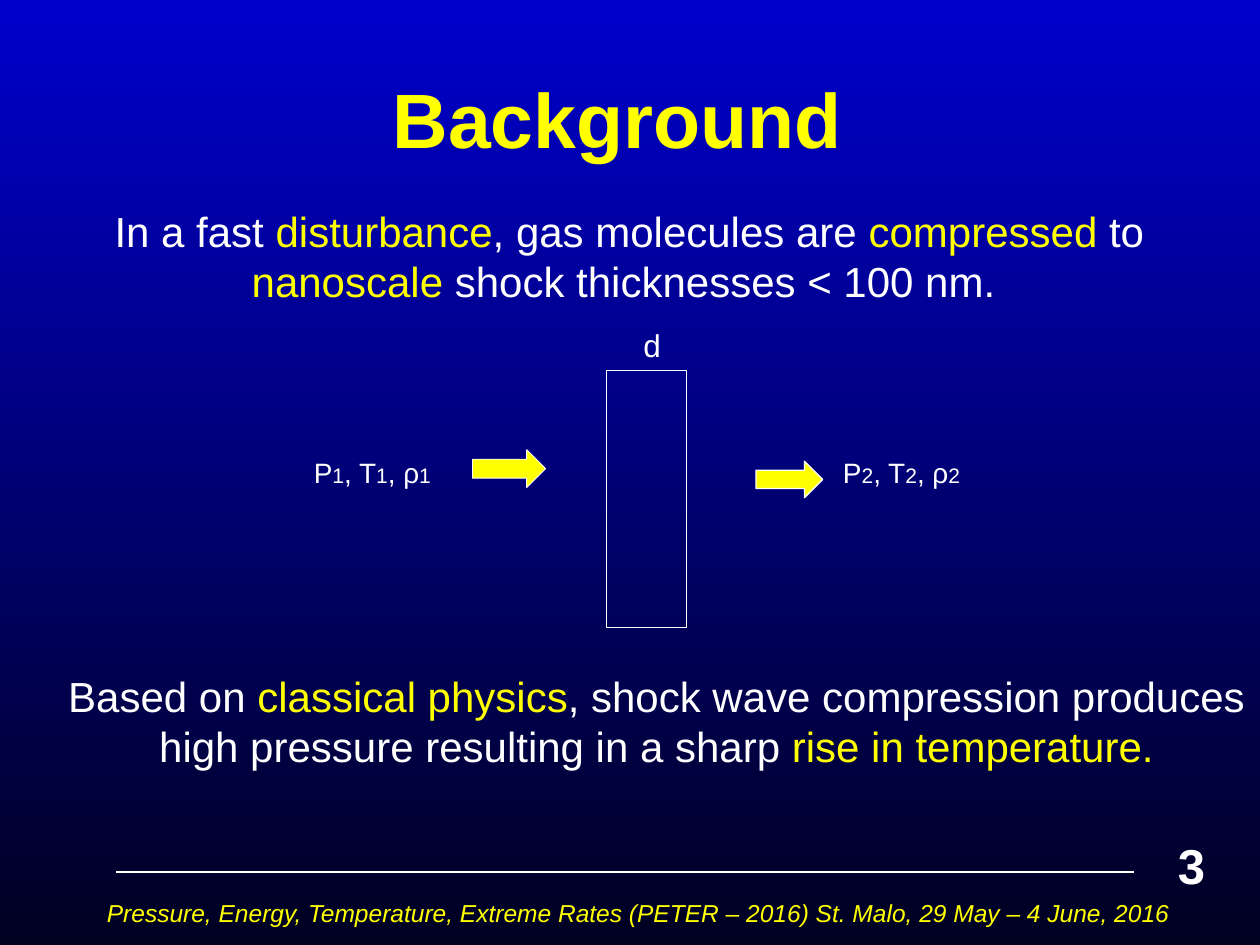
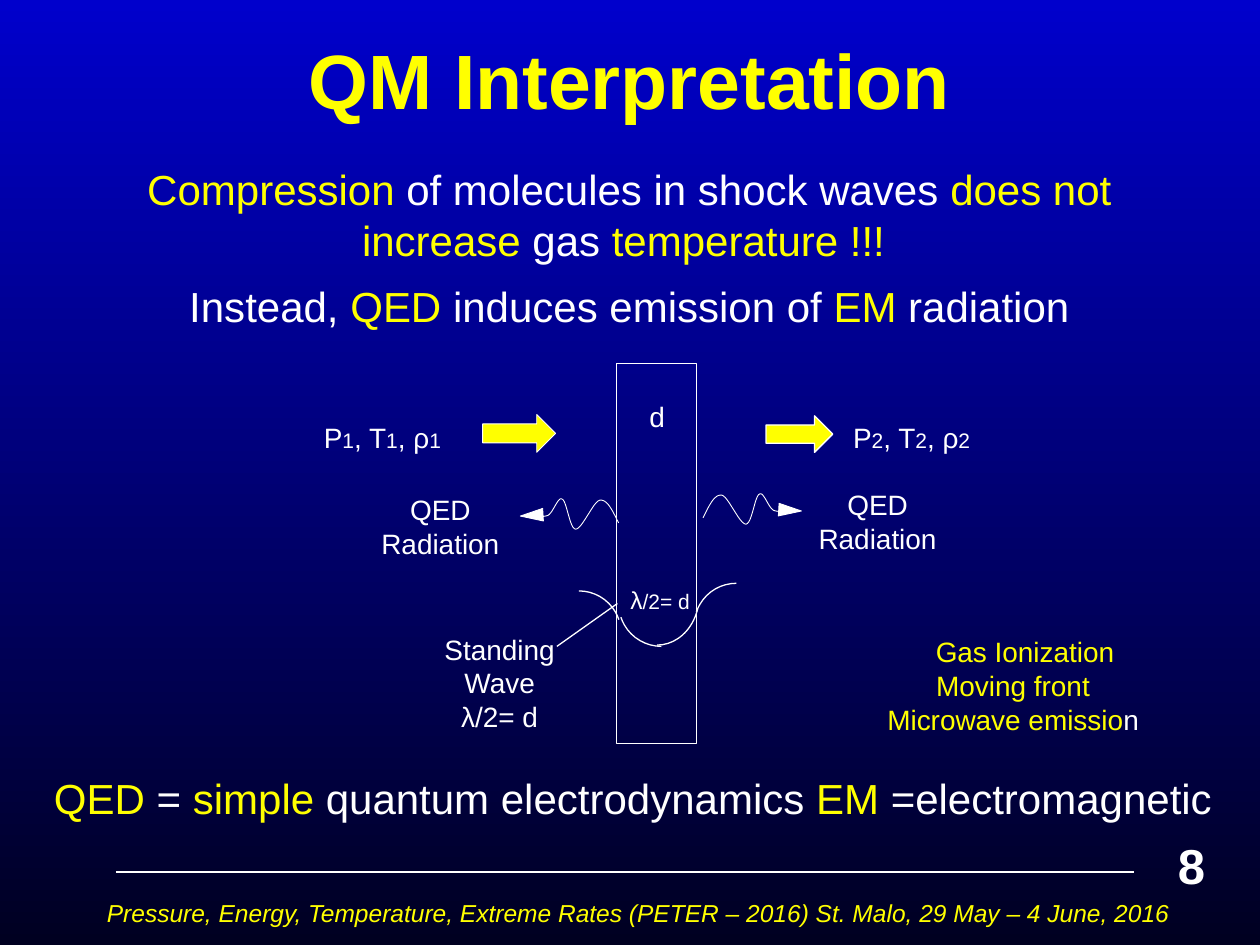
"""Build two slides on shock waves and their QED interpretation."""
from dataclasses import dataclass

from pptx import Presentation
from pptx.dml.color import RGBColor
from pptx.enum.shapes import MSO_CONNECTOR, MSO_SHAPE
from pptx.enum.text import MSO_ANCHOR, PP_ALIGN
from pptx.oxml.ns import qn
from pptx.util import Inches, Pt
from lxml.etree import SubElement


@dataclass(frozen=True)
class Theme:
    """Colours, font and type sizes shared by the slides."""
    font: str = "Arial"
    white: str = "FFFFFF"
    yellow: str = "FFFF00"
    sky: str = "0000CC"
    night: str = "000021"
    title: int = 44
    number: int = 28
    body: int = 24
    thickness: int = 18
    label: int = 16
    footer: int = 14
    small: int = 12


THEME = Theme()
FOOTER = ("Pressure, Energy, Temperature, Extreme Rates (PETER – 2016) "
          "St. Malo, 29 May – 4 June, 2016")
WAVE_CURVES = [
    [(0.05, -0.10), (0.09, -0.19), (0.15, -0.18)],
    [(0.20, -0.17), (0.29, 0.05), (0.34, 0.05)],
    [(0.39, 0.05), (0.41, -0.18), (0.45, -0.19)],
    [(0.48, -0.21), (0.52, -0.08), (0.56, -0.06)],
    [(0.61, -0.04), (0.65, -0.06), (0.70, -0.08)],
]


def rgb(color):
    """Return a colour object for a hexadecimal string."""
    return RGBColor.from_string(color)


def add_text(slide, text, left, top, width, height, *, size=THEME.label,
             color=THEME.white, accent_color=None, accent_size=None,
             bold=False, italic=False, align=PP_ALIGN.CENTER,
             anchor=MSO_ANCHOR.TOP, space_before=0):
    """Add a text box; bars in the text switch the accent on and off."""
    box = slide.shapes.add_textbox(Inches(left), Inches(top), Inches(width), Inches(height))
    frame = box.text_frame
    frame.word_wrap = True
    frame.vertical_anchor = anchor
    for index, line in enumerate(text.split("\n")):
        paragraph = frame.add_paragraph() if index else frame.paragraphs[0]
        paragraph.alignment = align
        paragraph.space_before = Pt(space_before if index else 0)
        for part, words in enumerate(line.split("|")):
            if not words:
                continue
            accented = part % 2 == 1
            run = paragraph.add_run()
            run.text = words
            font = run.font
            font.name, font.bold, font.italic = THEME.font, bold, italic
            font.size = Pt(accent_size if accented and accent_size else size)
            font.color.rgb = rgb(accent_color if accented and accent_color else color)
    return box


def add_body(slide, text, left, top, width, height, **options):
    """Add body text with yellow accents."""
    add_text(slide, text, left, top, width, height, size=THEME.body,
             accent_color=THEME.yellow, **options)


def style_shape(shape, fill=None, line_width=0.75):
    """Give a shape a white outline, an optional fill and no shadow."""
    shape.shadow.inherit = False
    if fill:
        shape.fill.solid()
        shape.fill.fore_color.rgb = rgb(fill)
    else:
        shape.fill.background()
    shape.line.color.rgb = rgb(THEME.white)
    shape.line.width = Pt(line_width)


def add_shape(slide, kind, left, top, width, height, **style):
    """Add a styled preset shape."""
    shape = slide.shapes.add_shape(kind, Inches(left), Inches(top), Inches(width), Inches(height))
    style_shape(shape, **style)
    return shape


def add_line(slide, start, end):
    """Add a thin white straight line."""
    line = slide.shapes.add_connector(
        MSO_CONNECTOR.STRAIGHT, *(Inches(value) for value in (*start, *end)))
    line.line.color.rgb = rgb(THEME.white)
    line.line.width = Pt(0.75)
    SubElement(line.element.spPr, qn("a:effectLst"))


def add_arc(slide, left, top, width, height, start, end):
    """Add an arc between two clockwise angles in degrees."""
    arc = add_shape(slide, MSO_SHAPE.ARC, left, top, width, height)
    arc.adjustments[0] = start * 0.6
    arc.adjustments[1] = end * 0.6


def wave_points(steps=12):
    """Sample the Bezier curves of a radiation wave."""
    start = (0, 0)
    points = []
    for first, second, end in WAVE_CURVES:
        for step in range(1, steps + 1):
            t = step / steps
            weights = ((1 - t) ** 3, 3 * t * (1 - t) ** 2, 3 * t * t * (1 - t), t ** 3)
            points.append(tuple(
                sum(weight * value for weight, value in zip(weights, values))
                for values in zip(start, first, second, end)))
        start = end
    return points


def add_radiation(slide, x, y, direction):
    """Add a wave with an arrowhead, going right (1) or left (-1)."""
    builder = slide.shapes.build_freeform(Inches(x), Inches(y))
    builder.add_line_segments(
        [(Inches(x + direction * across), Inches(y + down))
         for across, down in wave_points()], close=False)
    style_shape(builder.convert_to_shape(), line_width=0.5)
    head = add_shape(slide, MSO_SHAPE.ISOSCELES_TRIANGLE, x + direction * 0.69 - 0.05,
                     y - 0.15, 0.1, 0.18, fill=THEME.white, line_width=0.5)
    head.rotation = direction * 93.4


def add_flow(slide, left, top, exit_drop, front_top, front_height):
    """Add the gas states, flow arrows and shock front."""
    for state, offset in ((1, 0), (2, 4.2)):
        add_text(slide, f"P|{state}|, T|{state}|, ρ|{state}", left + offset, top,
                 1.25, 0.37, accent_size=THEME.small)
    add_shape(slide, MSO_SHAPE.RIGHT_ARROW, left + 1.42, top, 0.58, 0.3,
              fill=THEME.yellow, line_width=0.5)
    add_shape(slide, MSO_SHAPE.RIGHT_ARROW, left + 3.67, top + exit_drop, 0.53, 0.29,
              fill=THEME.yellow)
    add_shape(slide, MSO_SHAPE.RECTANGLE, left + 2.48, front_top, 0.64, front_height,
              line_width=0.25)


def set_background(presentation):
    """Give every slide the blue vertical gradient."""
    fill = presentation.slide_master.background.fill
    fill.gradient()
    fill.gradient_angle = 270
    for stop, color in zip(fill.gradient_stops, (THEME.sky, THEME.night)):
        stop.color.rgb = rgb(color)


def add_slide(presentation, title, number, title_left, title_top):
    """Add a slide with its title, rule, footer and number."""
    slide = presentation.slides.add_slide(presentation.slide_layouts[6])
    add_line(slide, (0.92, 6.92), (9, 6.92))
    add_text(slide, title, title_left, title_top, 8.5, 1.25, size=THEME.title,
             color=THEME.yellow, bold=True, anchor=MSO_ANCHOR.MIDDLE)
    add_text(slide, FOOTER, 0.75, 7.08, 8.75, 0.42, size=THEME.footer,
             color=THEME.yellow, italic=True, align=PP_ALIGN.LEFT)
    add_text(slide, str(number), 9.25, 6.58, 0.75, 0.57, size=THEME.number,
             bold=True, align=PP_ALIGN.LEFT)
    return slide


def build_background(presentation):
    """Build the slide on classical shock compression."""
    slide = add_slide(presentation, "Background", 3, 0.65, 0.31)
    add_body(slide, "In a fast |disturbance|, gas molecules are |compressed |to "
             "|nanoscale| shock thicknesses < 100 nm. ", 0.58, 1.58, 8.83, 0.91)
    add_flow(slide, 2.33, 3.57, 0.09, 2.94, 2.04)
    add_text(slide, "d", 4.55, 2.54, 1.25, 0.4, size=THEME.thickness)
    add_body(slide, "Based on |classical physics|, shock wave compression produces "
             "high pressure resulting in a sharp |rise in temperature.",
             0.42, 5.27, 9.58, 0.91)


def build_interpretation(presentation):
    """Build the slide on the QED interpretation."""
    slide = add_slide(presentation, "QM Interpretation", 8, 0.75, 0)
    add_body(slide, "|Compression| of molecules in shock waves |does not increase| gas "
             "|temperature !!! \nInstead, |QED| induces emission of |EM| radiation",
             0.58, 1.25, 8.83, 1.72, space_before=9)
    add_flow(slide, 2.41, 3.29, 0.01, 2.88, 3.02)
    add_text(slide, "d", 4.59, 3.12, 1.25, 0.37)

    add_radiation(slide, 5.58, 4.11, 1)
    add_radiation(slide, 4.91, 4.15, -1)
    for left, top in ((6.34, 3.82), (2.87, 3.86)):
        add_text(slide, "QED\nRadiation", left, top, 1.25, 0.64)

    add_arc(slide, 4.26, 4.69, 0.67, 0.67, 270, 341.4)
    add_arc(slide, 5.51, 4.63, 0.67, 0.67, 198.6, 270)
    add_arc(slide, 4.91, 4.45, 0.68, 0.68, 90, 161.4)
    add_arc(slide, 4.88, 4.33, 0.67, 0.79, 18.6, 90)
    add_line(slide, (4.42, 5.13), (4.9, 4.79))
    add_text(slide, "Standing\nWave\nλ/2= d", 3.34, 4.97, 1.25, 0.91)
    add_text(slide, "λ|/2= d", 4.61, 4.59, 1.26, 0.34, size=THEME.footer,
             accent_size=THEME.small)

    outcomes = add_text(slide, "Gas Ionization\nMoving front\nMicrowave emissio|n",
                        6.64, 4.99, 2.99, 0.91, color=THEME.yellow,
                        accent_color=THEME.white)
    moving_front = outcomes.text_frame.paragraphs[1]
    moving_front._p.get_or_add_pPr().set("marR", str(Inches(0.19)))
    add_body(slide, "|QED| = |simple| quantum electrodynamics| EM |=electromagnetic",
             0.33, 6.08, 9.6, 0.5, align=PP_ALIGN.LEFT)


def main():
    """Create and save the presentation."""
    presentation = Presentation()
    presentation.slide_width = Inches(10)
    presentation.slide_height = Inches(7.5)
    set_background(presentation)
    build_background(presentation)
    build_interpretation(presentation)
    presentation.save("out.pptx")


if __name__ == "__main__":
    main()
